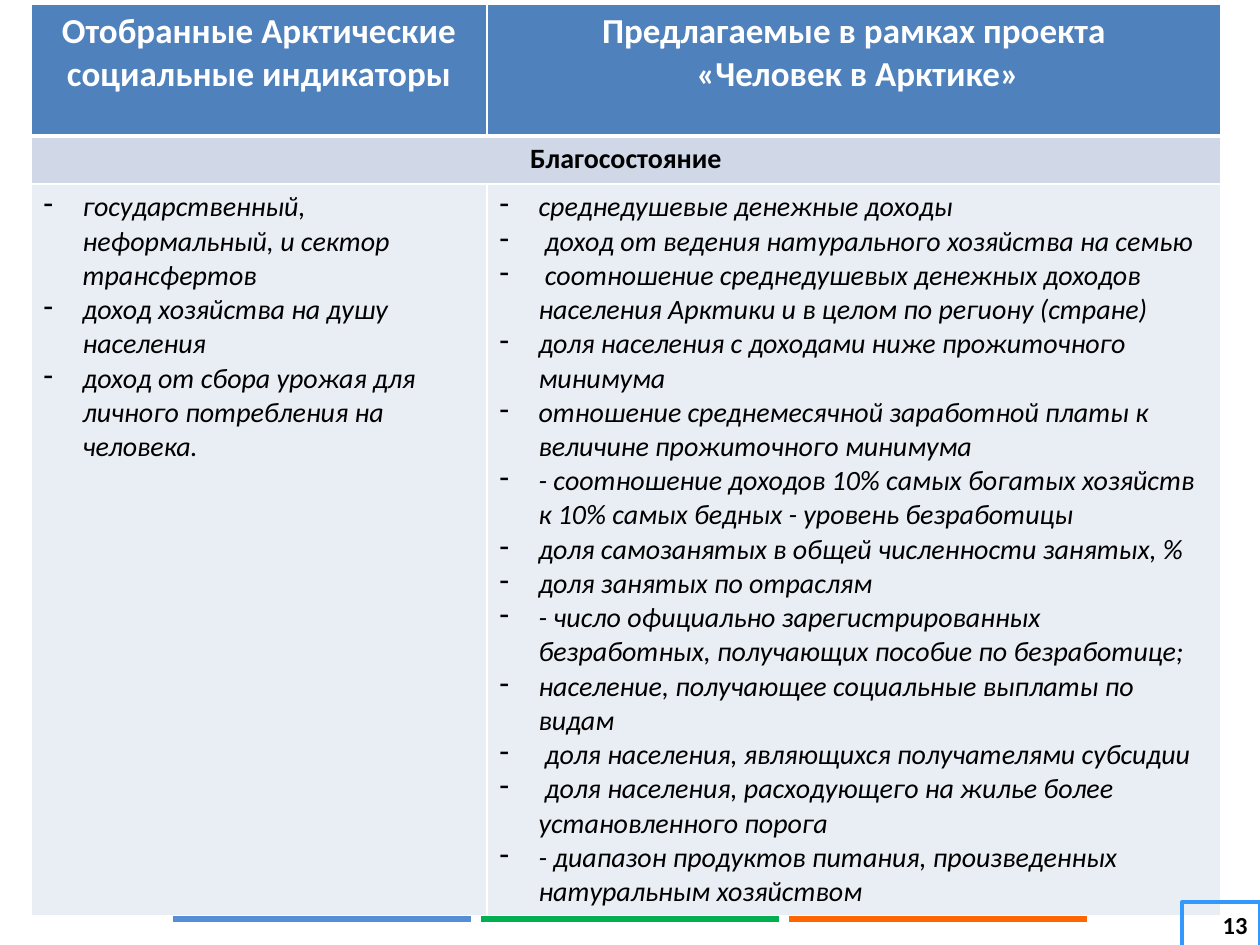
"""Build the slide comparing Arctic social indicators of well-being."""
import pptx
import pptx.dml.color
import pptx.enum.shapes
import pptx.enum.text
import pptx.oxml
import pptx.oxml.ns
import pptx.util
from lxml import etree

EMU_PER_PX = 914400 / 126
THEME = {
    "font": "Calibri", "header_size": 20, "body_size": 16, "number_size": 14,
    "header": "4F81BD", "section": "D0D8E8", "body": "E9EDF4",
    "white": "FFFFFF", "black": "000000", "number_frame": "3399FF",
    "stripes": ["558ED5", "00B050", "FF6600"],
}
ALIGN = pptx.enum.text.PP_ALIGN
qn = pptx.oxml.ns.qn
rgb = pptx.dml.color.RGBColor.from_string


def px(length):
    return round(length * EMU_PER_PX)


def write(frame, lines, size, color="black", bold=True, italic=False, align=ALIGN.LEFT, bullet=None):
    frame.word_wrap = True
    for index, line in enumerate(lines):
        paragraph = frame.add_paragraph() if index else frame.paragraphs[0]
        paragraph.alignment = align
        if bullet:
            properties = paragraph._p.get_or_add_pPr()
            properties.set("marL", str(px(39)))
            properties.set("indent", str(-px(39)))
            etree.SubElement(properties, qn("a:buChar"), char=bullet)
        run = paragraph.add_run()
        run.text = line
        run.font.name = THEME["font"]
        run.font.size = pptx.util.Pt(THEME[size])
        run.font.bold = bold
        run.font.italic = italic
        run.font.color.rgb = rgb(THEME[color])


presentation = pptx.Presentation()
presentation.slide_width = px(1260)
presentation.slide_height = px(945)
slide = presentation.slides.add_slide(presentation.slide_layouts[6])

for index, color in enumerate(THEME["stripes"]):
    left = 173 + index * 308
    stripe = slide.shapes.add_connector(
        pptx.enum.shapes.MSO_CONNECTOR.STRAIGHT, px(left), px(919), px(left + 298), px(919))
    stripe.line.color.rgb = rgb(color)
    stripe.line.width = pptx.util.Pt(3.5)
    etree.SubElement(stripe._element.spPr, qn("a:effectLst"))

column_widths = [456, 734]
row_heights = [132, 48, 731]
indicators = slide.shapes.add_table(
    3, 2, px(31), px(4), px(sum(column_widths)), px(sum(row_heights))).table
indicators.horz_banding = False
for column, width in zip(indicators.columns, column_widths):
    column.width = px(width)
for row, height, fill in zip(indicators.rows, row_heights, ["header", "section", "body"]):
    row.height = px(height)
    for cell in row.cells:
        cell.fill.solid()
        cell.fill.fore_color.rgb = rgb(THEME[fill])
        for position, side in enumerate(["lnL", "lnR", "lnT", "lnB"]):
            thick = (fill, side) in [("header", "lnB"), ("section", "lnT")]
            border = etree.Element(qn(f"a:{side}"), w=str(pptx.util.Pt(3 if thick else 1)))
            paint = etree.SubElement(border, qn("a:solidFill"))
            etree.SubElement(paint, qn("a:srgbClr"), val=THEME["white"])
            cell._tc.get_or_add_tcPr().insert(position, border)
indicators.cell(1, 0).merge(indicators.cell(1, 1))

headings = [
    ["Отобранные Арктические социальные индикаторы"],
    ["Предлагаемые в рамках проекта", " «Человек в Арктике»"],
]
measures = [
    [
        "государственный, неформальный, и сектор трансфертов",
        "доход хозяйства на душу населения",
        "доход от сбора урожая для личного потребления на человека.",
    ],
    [
        "среднедушевые денежные доходы",
        " доход от ведения натурального хозяйства на семью",
        " соотношение среднедушевых денежных доходов населения Арктики и в целом по региону (стране)",
        "доля населения с доходами ниже прожиточного минимума",
        "отношение среднемесячной заработной платы к величине прожиточного минимума",
        "- соотношение доходов 10% самых богатых хозяйств к 10% самых бедных - уровень безработицы",
        "доля самозанятых в общей численности занятых, %",
        "доля занятых по отраслям",
        "- число официально зарегистрированных безработных, получающих пособие по безработице;",
        "население, получающее социальные выплаты по видам",
        " доля населения, являющихся получателями субсидии",
        " доля населения, расходующего на жилье более установленного порога",
        "- диапазон продуктов питания, произведенных натуральным хозяйством",
    ],
]
for column in range(2):
    write(indicators.cell(0, column).text_frame, headings[column], "header_size",
          color="white", align=ALIGN.CENTER)
    write(indicators.cell(2, column).text_frame, measures[column], "body_size",
          bold=False, italic=True, bullet="-")
write(indicators.cell(1, 0).text_frame, ["Благосостояние"], "body_size", align=ALIGN.CENTER)

page_number = slide.shapes.add_shape(
    pptx.enum.shapes.MSO_SHAPE.RECTANGLE, px(1182), px(902), px(78), px(45))
page_number.shadow.inherit = False
page_number.fill.background()
page_number.line.color.rgb = rgb(THEME["number_frame"])
page_number.line.width = pptx.util.Pt(2.25)
page_number.text_frame.vertical_anchor = pptx.enum.text.MSO_ANCHOR.MIDDLE
write(page_number.text_frame, ["13"], "number_size", align=ALIGN.RIGHT)

presentation.save("out.pptx")
